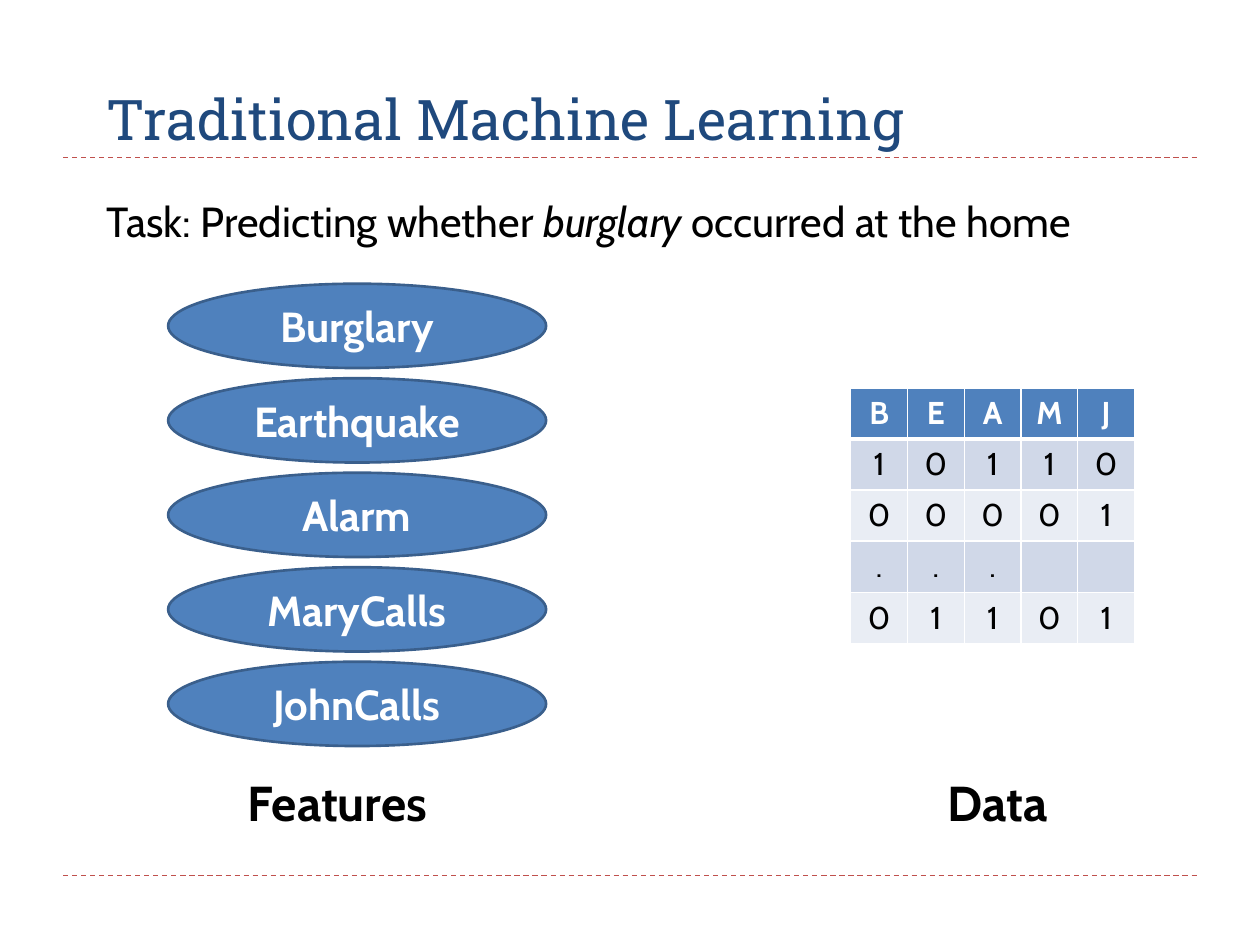
"""Builds a slide on burglary prediction with features and a data table."""
import lxml.etree
import pptx
import pptx.dml.color
import pptx.enum.dml
import pptx.enum.shapes
import pptx.enum.text
import pptx.oxml
import pptx.oxml.ns
import pptx.util

Cm = pptx.util.Cm
Pt = pptx.util.Pt
RGB = pptx.dml.color.RGBColor
Align = pptx.enum.text.PP_ALIGN
Anchor = pptx.enum.text.MSO_ANCHOR
qn = pptx.oxml.ns.qn

NAVY = RGB(0x1F, 0x49, 0x7D)
BLUE = RGB(0x4F, 0x81, 0xBD)
EDGE = RGB(0x3A, 0x5F, 0x8C)
RED = RGB(0xC0, 0x50, 0x4D)
BLACK = RGB(0, 0, 0)
WHITE = RGB(0xFF, 0xFF, 0xFF)
DARK = RGB(0xD0, 0xD8, 0xE8)
PALE = RGB(0xE9, 0xED, 0xF4)


class Deck:
    def __init__(self):
        self.show = pptx.Presentation()
        self.show.slide_width, self.show.slide_height = Cm(25.4), Cm(19.05)
        self.slide = self.show.slides.add_slide(self.show.slide_layouts[6])
        self.font = "Cabin"

    def style(self, para, size, color, bold=False, font=None, align=None):
        para.alignment = align
        for run in para.runs:
            run.font.name = font or self.font
            run.font.size = Pt(size)
            run.font.bold = bold
            run.font.color.rgb = color

    def rule(self, top):
        line = self.slide.shapes.add_connector(
            pptx.enum.shapes.MSO_CONNECTOR.STRAIGHT, Cm(1.27), Cm(top), Cm(24.13), Cm(top))
        line.line.color.rgb = RED
        line.line.width = Pt(0.75)
        line.line.dash_style = pptx.enum.dml.MSO_LINE.DASH
        props = line._element.find(qn("p:spPr"))
        lxml.etree.SubElement(props, qn("a:effectLst"))

    def text(self, parts, left, top, width, height, size, color=BLACK,
             bold=False, font=None, anchor=Anchor.TOP, wrap=False):
        box = self.slide.shapes.add_textbox(Cm(left), Cm(top), Cm(width), Cm(height))
        frame = box.text_frame
        frame.word_wrap = wrap
        frame.vertical_anchor = anchor
        para = frame.paragraphs[0]
        for part in parts:
            para.add_run().text = part
        self.style(para, size, color, bold, font)
        return para

    def oval(self, label, left, top, width, height):
        shape = self.slide.shapes.add_shape(
            pptx.enum.shapes.MSO_SHAPE.OVAL, Cm(left), Cm(top), Cm(width), Cm(height))
        shape.shadow.inherit = False
        shape.fill.solid()
        shape.fill.fore_color.rgb = BLUE
        shape.line.color.rgb = EDGE
        shape.line.width = Pt(1.5)
        frame = shape.text_frame
        frame.text = label
        frame.vertical_anchor = Anchor.MIDDLE
        self.style(frame.paragraphs[0], 24, WHITE, True, align=Align.CENTER)

    def border(self, cell, side, width):
        props = cell._tc.get_or_add_tcPr()
        line = lxml.etree.SubElement(props, qn(f"a:ln{side}"), w=str(Pt(width)))
        fill = lxml.etree.SubElement(line, qn("a:solidFill"))
        lxml.etree.SubElement(fill, qn("a:srgbClr"), val=str(WHITE))

    def table(self, rows, left, top, width, height):
        grid = self.slide.shapes.add_table(
            len(rows), len(rows[0]), Cm(left), Cm(top), Cm(width), Cm(height)).table
        for r, row in enumerate(rows):
            head = r == 0
            for c, value in enumerate(row):
                cell = grid.cell(r, c)
                cell.text = value.strip()
                self.style(cell.text_frame.paragraphs[0], 18, WHITE if head else BLACK,
                           head, align=Align.CENTER)
                for side in "LRTB":
                    thick = (r, side) in ((0, "B"), (1, "T"))
                    self.border(cell, side, 3 if thick else 1)
                cell.fill.solid()
                cell.fill.fore_color.rgb = BLUE if head else DARK if r % 2 else PALE


def main():
    deck = Deck()
    for top in (17.65, 3.18):
        deck.rule(top)
    deck.text(["Traditional Machine Learning"], 1.9, 0, 22.86, 3.18, 32, NAVY,
              font="Roboto Slab", anchor=Anchor.BOTTOM, wrap=True)
    task = deck.text(["Task: Predicting whether ", "burglary", " occurred at the home"],
                     1.9, 3.81, 21.49, 1.27, 24)
    task.runs[1].font.italic = True
    names = ("Burglary", "Earthquake", "Alarm", "MaryCalls", "JohnCalls")
    for i, name in enumerate(names):
        deck.oval(name, 3.39, 5.72 + 1.905 * i, 7.62, 1.7)
    deck.table(("BEAMJ", "10110", "00001", "...  ", "01101"), 17.15, 7.82, 5.72, 5.15)
    deck.text(["Features"], 4.75, 15.44, 4.57, 1.45, 28, bold=True)
    deck.text(["Data"], 18.85, 15.44, 2.69, 1.45, 28, bold=True)
    deck.show.save("out.pptx")


if __name__ == "__main__":
    main()
